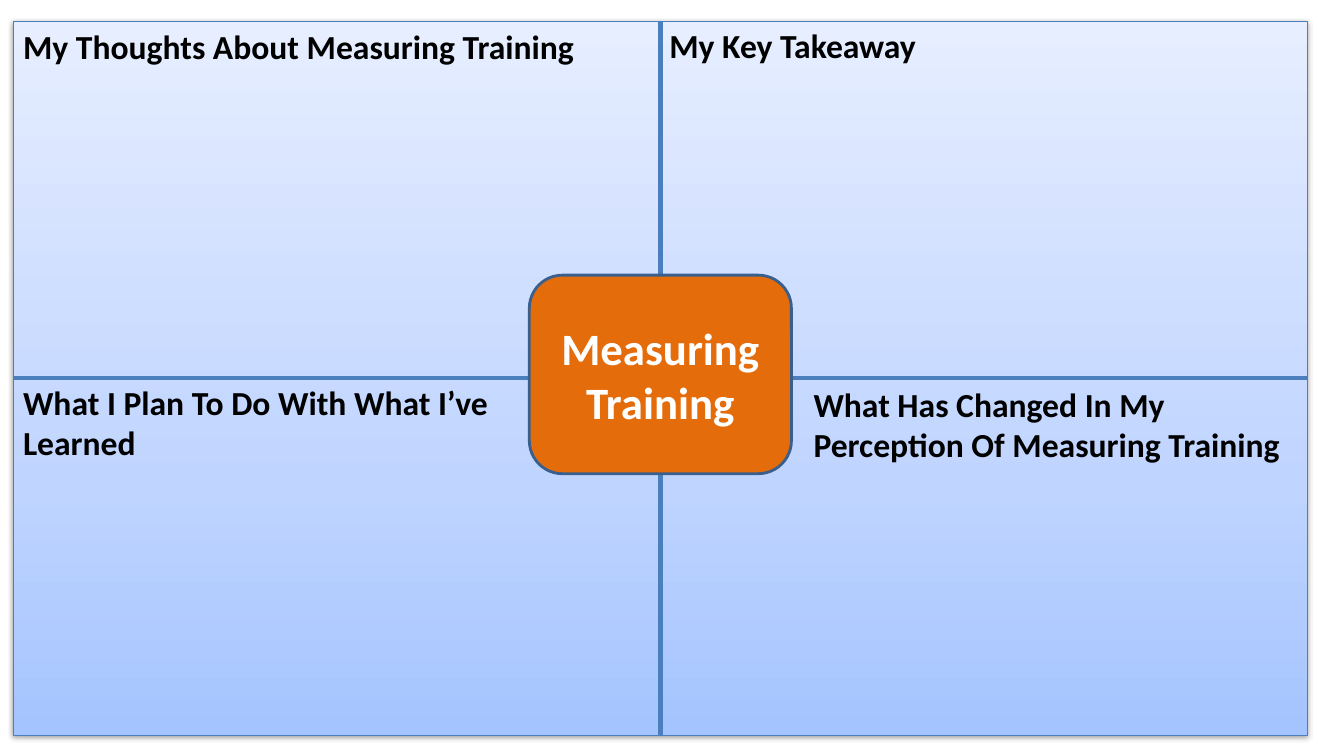
from dataclasses import dataclass

from lxml.etree import SubElement
from pptx import Presentation
from pptx.dml.color import RGBColor
from pptx.enum.shapes import MSO_CONNECTOR, MSO_SHAPE
from pptx.enum.text import MSO_ANCHOR, MSO_AUTO_SIZE, PP_ALIGN
from pptx.oxml.ns import qn
from pptx.util import Pt

EMU_PER_PX = 9144


@dataclass(frozen=True)
class Theme:
    """Colours, font and type sizes of the slide."""
    font: str = "Calibri"
    heading_size: int = 24
    topic_size: int = 32
    heading: str = "000000"
    topic_text: str = "FFFFFF"
    topic_fill: str = "E46C0A"
    topic_line: str = "3A5F8C"
    grid_line: str = "4B7EBC"
    shadow: str = "000000"
    gradient: tuple = ((0, "A4C4FF"), (35, "BFD4FF"), (100, "E6EEFF"))


def px(*lengths):
    """Turn pixel lengths into EMU."""
    return [length * EMU_PER_PX for length in lengths]


class QuadrantSlide:
    """Draws the elements of a four-quadrant slide in one style."""

    def __init__(self, slide, theme):
        """Keep the current slide and its theme."""
        self.slide = slide
        self.theme = theme

    def style_line(self, line, color, width):
        """Set the colour and point width of a line."""
        line.color.rgb = RGBColor.from_string(color)
        line.width = Pt(width)

    def style_text(self, text_frame, text, size, color):
        """Write bold text and format its run."""
        text_frame.text = text
        font = text_frame.paragraphs[0].runs[0].font
        font.name = self.theme.font
        font.size = Pt(size)
        font.bold = True
        font.color.rgb = RGBColor.from_string(color)

    def panel(self, left, top, width, height):
        """Add the gradient panel with its soft shadow."""
        shape = self.slide.shapes.add_shape(MSO_SHAPE.RECTANGLE, *px(left, top, width, height))
        shape.fill.gradient()
        shape.fill.gradient_angle = 90
        stops = shape.element.spPr.find(qn("a:gradFill")).find(qn("a:gsLst"))
        stops.clear()
        for position, color in self.theme.gradient:
            stop = SubElement(stops, qn("a:gs"), pos=str(position * 1000))
            SubElement(stop, qn("a:srgbClr"), val=color)
        self.style_line(shape.line, self.theme.grid_line, 0.75)
        shape.shadow.inherit = False
        effects = shape.element.spPr.find(qn("a:effectLst"))
        shadow = SubElement(effects, qn("a:outerShdw"), blurRad=str(Pt(3.1)),
                            dist=str(Pt(1.6)), dir="5400000", rotWithShape="0")
        color = SubElement(shadow, qn("a:srgbClr"), val=self.theme.shadow)
        SubElement(color, qn("a:alpha"), val="38000")

    def divider(self, *ends):
        """Add a straight line between two points."""
        connector = self.slide.shapes.add_connector(MSO_CONNECTOR.STRAIGHT, *px(*ends))
        self.style_line(connector.line, self.theme.grid_line, 3)
        SubElement(connector.element.spPr, qn("a:effectLst"))

    def topic(self, text, left, top, width, height):
        """Add the rounded box that names the topic."""
        shape = self.slide.shapes.add_shape(
            MSO_SHAPE.ROUNDED_RECTANGLE, *px(left, top, width, height))
        shape.shadow.inherit = False
        shape.fill.solid()
        shape.fill.fore_color.rgb = RGBColor.from_string(self.theme.topic_fill)
        self.style_line(shape.line, self.theme.topic_line, 2)
        self.style_text(shape.text_frame, text, self.theme.topic_size, self.theme.topic_text)
        shape.text_frame.vertical_anchor = MSO_ANCHOR.MIDDLE
        shape.text_frame.paragraphs[0].alignment = PP_ALIGN.CENTER

    def heading(self, text, left, top, width, height, wrap):
        """Add the heading of one quadrant."""
        text_frame = self.slide.shapes.add_textbox(*px(left, top, width, height)).text_frame
        text_frame.word_wrap = wrap
        text_frame.auto_size = MSO_AUTO_SIZE.SHAPE_TO_FIT_TEXT
        self.style_text(text_frame, text, self.theme.heading_size, self.theme.heading)


def main():
    """Build and save the presentation."""
    presentation = Presentation()
    presentation.slide_width, presentation.slide_height = px(1333, 750)
    slide = presentation.slides.add_slide(presentation.slide_layouts[6])
    quadrants = QuadrantSlide(slide, Theme())

    left, top, width, height = 13, 21, 1284, 709
    center, middle = left + width // 2, top + height // 2
    quadrants.panel(left, top, width, height)
    quadrants.divider(center, top, center, top + height)
    quadrants.divider(left, middle, left + width, middle)
    quadrants.topic("Measuring Training", center - 130, 273, 260, 197)

    headings = (
        ("My Thoughts About Measuring Training", left, top, 572, 50, False),
        ("My Key Takeaway", 654, 20, 275, 50, False),
        ("What I Plan To Do With What I’ve Learned", left, 374, 488, 91, True),
        ("What Has Changed In My Perception Of Measuring Training", 797, 376, 488, 91, True),
    )
    for heading in headings:
        quadrants.heading(*heading)
    presentation.save("out.pptx")


if __name__ == "__main__":
    main()
